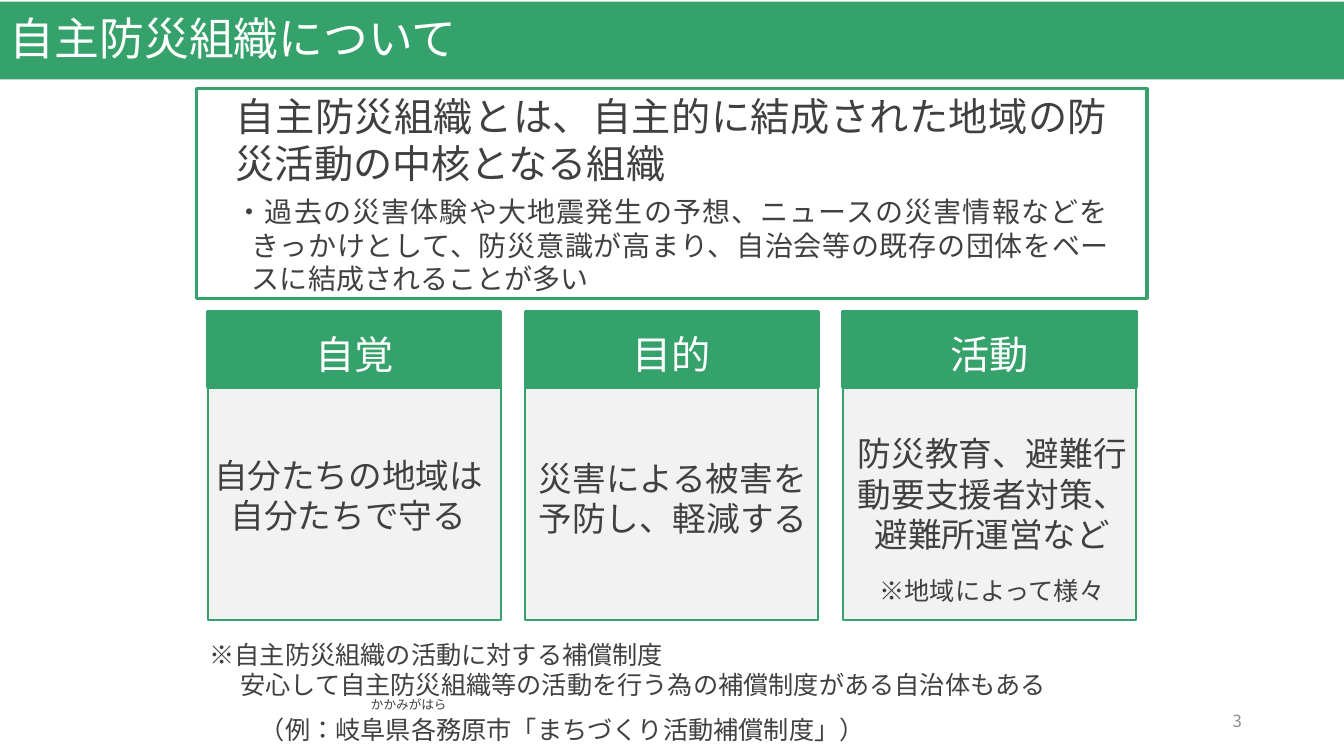
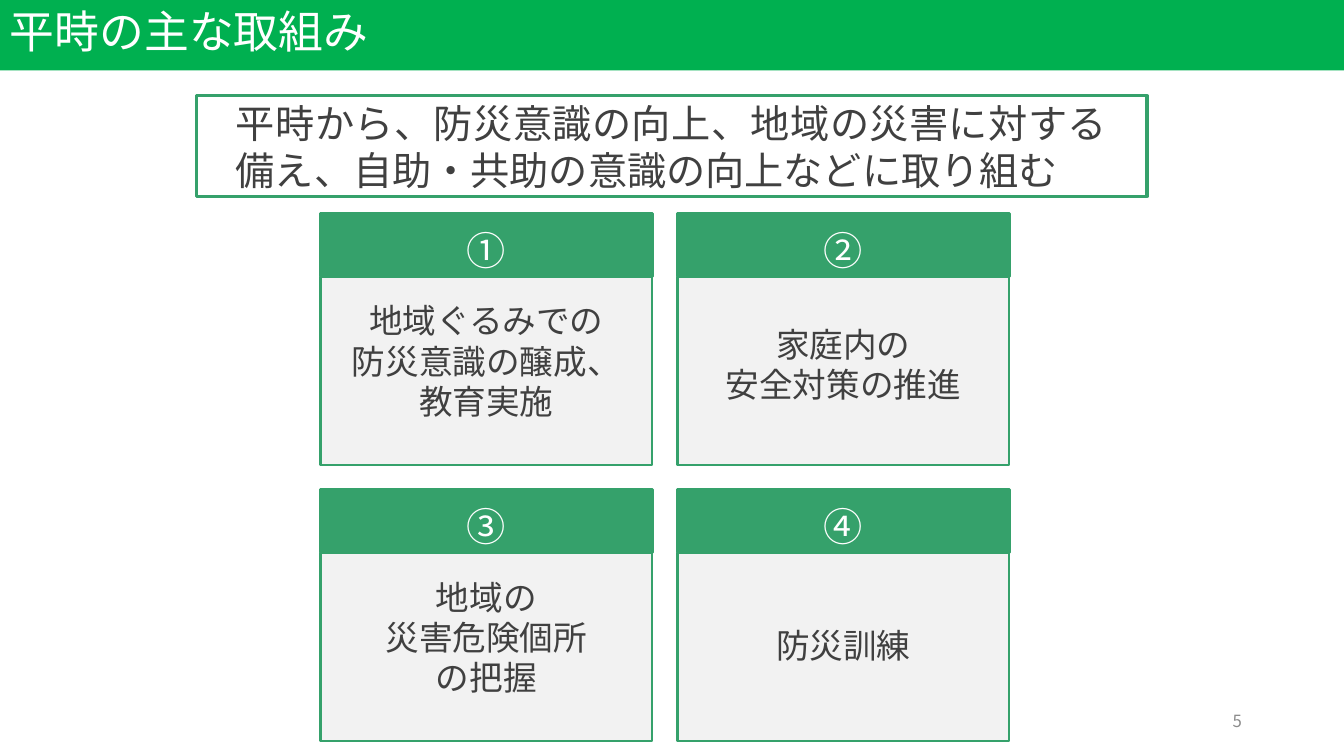
from dataclasses import dataclass
from lxml.etree import SubElement
from pptx import Presentation
from pptx.dml.color import RGBColor
from pptx.enum.lang import MSO_LANGUAGE_ID
from pptx.enum.shapes import MSO_SHAPE
from pptx.enum.text import MSO_ANCHOR, PP_ALIGN
from pptx.oxml.ns import qn
from pptx.util import Emu, Inches, Pt

COLS, ROWS = 160, 90
CELL = Inches(1) // 12
FONT = "Noto Sans CJK JP"
GREEN, VIVID, PALE = "35A16B", "00B050", "F2F2F2"
WHITE, INK, GREY = "FFFFFF", "404040", "8C8C8C"
LEFT, MID, RIGHT, JUST = PP_ALIGN.LEFT, PP_ALIGN.CENTER, PP_ALIGN.RIGHT, PP_ALIGN.JUSTIFY


@dataclass
class Box:
    x: float
    y: float
    w: float
    h: float

    def emu(self):
        return [Emu(round(n * CELL)) for n in (self.x, self.y, self.w, self.h)]


@dataclass
class Para:
    text: str
    size: float
    align: PP_ALIGN = LEFT
    color: str = INK
    space: object = None
    before: float = 0
    margin: float = 0
    hang: float = 0


def paint(target, code):
    target.rgb = RGBColor.from_string(code)


def write(shape, paras, anchor=MSO_ANCHOR.TOP, pad=None):
    frame = shape.text_frame
    frame.word_wrap = True
    frame.vertical_anchor = anchor
    if pad:
        frame.margin_left = frame.margin_right = Inches(pad)
    frame.text = "\n".join(item.text for item in paras)
    for para, item in zip(frame.paragraphs, paras):
        para.alignment = item.align
        if item.space:
            para.line_spacing = item.space
        para.space_before = Pt(item.before)
        props = para._p.get_or_add_pPr()
        props.set("marL", str(Pt(item.margin)))
        props.set("indent", str(Pt(-item.hang)))
        for run in para.runs:
            font = run.font
            font.name, font.size = FONT, Pt(item.size)
            font.language_id = MSO_LANGUAGE_ID.JAPANESE
            paint(font.color, item.color)
            SubElement(run._r.get_or_add_rPr(), qn("a:ea")).set("typeface", FONT)


def label(slide, box, paras, anchor=MSO_ANCHOR.TOP):
    write(slide.shapes.add_textbox(*box.emu()), paras, anchor)


def panel(slide, box, fill=None, line=None, width=2.25):
    shape = slide.shapes.add_shape(MSO_SHAPE.RECTANGLE, *box.emu())
    shape.shadow.inherit = False
    if fill:
        shape.fill.solid()
        paint(shape.fill.fore_color, fill)
    else:
        shape.fill.background()
    if line:
        paint(shape.line.color, line)
        shape.line.width = Pt(width)
    else:
        shape.line.fill.background()
    return shape


def frame(deck, title, page, box, fill):
    slide = deck.slides.add_slide(deck.slide_layouts[6])
    band = panel(slide, box, fill)
    write(band, [Para(title, 32, color=WHITE, space=0.9)], MSO_ANCHOR.MIDDLE)
    label(slide, Box(113.04, 83.4, 36, 4.8),
          [Para(page, 12, RIGHT, GREY)], MSO_ANCHOR.MIDDLE)
    return slide


def lead(slide, box, paras):
    write(panel(slide, box, line=GREEN), paras, MSO_ANCHOR.MIDDLE, 0.39)


def card(slide, box, head, start, title, lines, drop, shift=0):
    body = Box(box.x, box.y + start, box.w, box.h - start)
    panel(slide, body, PALE, GREEN, 1.5)
    label(slide, Box(box.x - 1.44 + shift, box.y + drop, box.w + 2.88, box.h - drop),
          [Para(line, 24, MID) for line in lines])
    top = panel(slide, Box(box.x, box.y, box.w, head), GREEN, GREEN)
    write(top, [Para(title, 28, MID, WHITE, Pt(40))], MSO_ANCHOR.MIDDLE, 0.39)


def notes(slide, box):
    label(slide, box, [
        Para("※自主防災組織の活動に対する補償制度", 18),
        Para("安心して自主防災組織等の活動を行う為の補償制度がある自治体もある", 18, margin=22),
        Para("（例：岐阜県各務原市「まちづくり活動補償制度」）", 18, space=1.5, margin=36),
    ])
    label(slide, Box(box.x + 6, box.y + 6.84, 37.8, 4.8),
          [Para("かかみがはら", 9, MID)])


def about(deck):
    slide = frame(deck, "自主防災組織について", "3", Box(0, 0.2, COLS, 9.25), GREEN)
    lead(slide, Box(23.4, 10.56, 113.16, 24.96), [
        Para("自主防災組織とは、自主的に結成された地域の防災活動の中核となる組織", 28, JUST),
        Para("・過去の災害体験や大地震発生の予想、ニュースの災害情報などをきっかけとして、"
             "防災意識が高まり、自治会等の既存の団体をベースに結成されることが多い",
             20, JUST, before=6, margin=11.5, hang=11.5),
    ])
    items = [
        ("自覚", ["自分たちの地域は", "自分たちで守る"], 16.44, -0.7),
        ("目的", ["災害による被害を", "予防し、軽減する"], 16.8, 0.12),
        ("活動", ["防災教育、避難行", "動要支援者対策、", "避難所運営など"], 13.92, 0.36),
    ]
    for col, item in enumerate(items):
        box = Box(24.72 + col * 37.8, 37.08, 34.92, 36.72)
        card(slide, box, 9, 7.44, *item)
    label(slide, Box(box.x + 1.56, box.y + 30.84, 32.4, 5.76),
          [Para("※地域によって様々", 18, MID)])
    notes(slide, Box(23.76, 75.48, 103, 14.5))


def daily(deck):
    slide = frame(deck, "平時の主な取組み", "5", Box(0, -0.36, COLS, 8.76), VIVID)
    lead(slide, Box(23.4, 11.4, 113.16, 12), [
        Para("平時から、防災意識の向上、地域の災害に対する備え、"
             "自助・共助の意識の向上などに取り組む", 28, JUST),
    ])
    items = [
        ("①", ["地域ぐるみでの", "防災意識の醸成、", "教育実施"], 9.72),
        ("②", ["家庭内の", "安全対策の推進"], 12.48),
        ("③", ["地域の", "災害危険個所", "の把握"], 9.72),
        ("④", ["防災訓練"], 15.48),
    ]
    for spot, item in enumerate(items):
        row, col = divmod(spot, 2)
        box = Box(38.16 + col * 42.5, 25.44 + row * 32.88, 39.48, 29.88)
        card(slide, box, 7.5, 7.5, *item)


def main():
    deck = Presentation()
    deck.slide_width, deck.slide_height = COLS * CELL, ROWS * CELL
    about(deck)
    daily(deck)
    deck.save("out.pptx")


if __name__ == "__main__":
    main()
